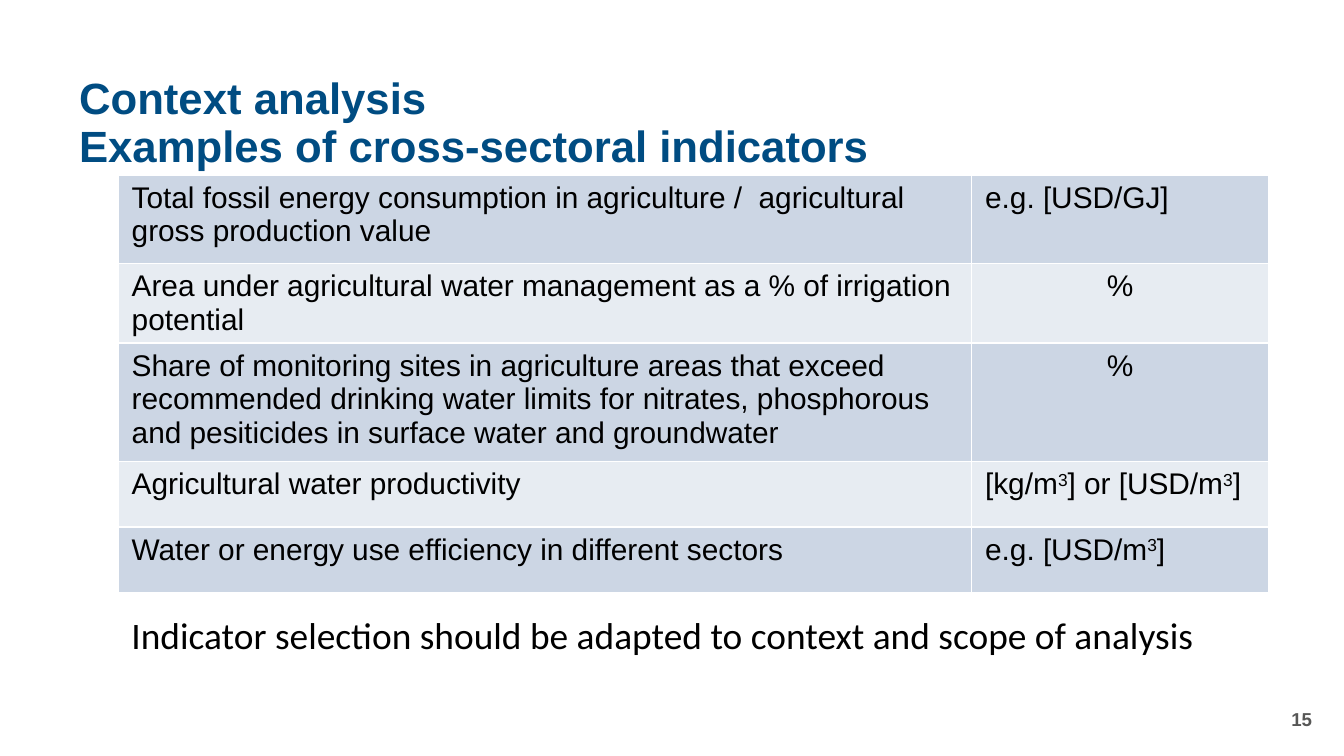
from dataclasses import dataclass

from lxml import etree
from pptx import Presentation
from pptx.dml.color import RGBColor
from pptx.enum.text import MSO_ANCHOR as Anchor, PP_ALIGN as Align
from pptx.oxml.ns import qn
from pptx.util import Inches, Pt

BLACK, WHITE, NAVY, GREY = "000000", "FFFFFF", "004C82", "575756"
BANDS = ("CCD6E4", "E7ECF2")


@dataclass
class Style:
    size: float
    color: str = BLACK
    font: str = "Arial"
    bold: bool = False


@dataclass
class Indicator:
    name: str
    unit: tuple[str, ...]  # every second part is superscript
    height: float
    align: Align = Align.LEFT


def rgb(color: str) -> RGBColor:
    return RGBColor.from_string(color)


def add_run(p, text: str, style: Style, superscript: bool = False) -> None:
    r = p.add_run()
    r.text = text
    r.font.name, r.font.size = style.font, Pt(style.size)
    r.font.bold, r.font.color.rgb = style.bold, rgb(style.color)
    if superscript:
        r._r.get_or_add_rPr().set("baseline", "30000")


def add_text(s, box: tuple[float, ...], lines: tuple[str, ...], style: Style,
             anchor: Anchor = Anchor.TOP, align: Align = Align.LEFT,
             spacing: float = 1.0) -> None:
    tf = s.shapes.add_textbox(*map(Inches, box)).text_frame
    tf.word_wrap, tf.vertical_anchor = True, anchor
    p = tf.paragraphs[0]
    p.alignment, p.line_spacing = align, spacing
    for i, line in enumerate(lines):
        if i:
            p.add_line_break()
        add_run(p, line, style)


def add_borders(cell, color: str, width: float) -> None:
    tc_pr = cell._tc.get_or_add_tcPr()
    for i, side in enumerate(("lnL", "lnR", "lnT", "lnB")):
        ln = etree.Element(qn(f"a:{side}"), w=str(Pt(width)))
        fill = etree.SubElement(ln, qn("a:solidFill"))
        etree.SubElement(fill, qn("a:srgbClr"), val=color)
        tc_pr.insert(i, ln)


def fill_cell(cell, parts: tuple[str, ...], style: Style, band: str,
              align: Align = Align.LEFT) -> None:
    cell.fill.solid()
    cell.fill.fore_color.rgb = rgb(band)
    cell.margin_bottom = Inches(0.01)
    add_borders(cell, WHITE, 1)
    p = cell.text_frame.paragraphs[0]
    p.alignment = align
    for i, part in enumerate(parts):
        add_run(p, part, style, superscript=i % 2 == 1)


def add_indicators(s, left: float, top: float, widths: tuple[float, ...],
                   rows: list[Indicator], style: Style) -> None:
    size = sum(widths), sum(row.height for row in rows)
    table = s.shapes.add_table(len(rows), len(widths),
                               *map(Inches, (left, top, *size))).table
    table.first_row = False
    for col, width in zip(table.columns, widths):
        col.width = Inches(width)
    for i, row in enumerate(rows):
        table.rows[i].height = Inches(row.height)
        band = BANDS[i % 2]
        fill_cell(table.cell(i, 0), (row.name,), style, band)
        fill_cell(table.cell(i, 1), row.unit, style, band, row.align)


INDICATORS = [
    Indicator("Total fossil energy consumption in agriculture /  agricultural "
              "gross production value", ("e.g. [USD/GJ]",), 0.66),
    Indicator("Area under agricultural water management as a % of irrigation "
              "potential", ("%",), 0.49, Align.CENTER),
    Indicator("Share of monitoring sites in agriculture areas that exceed "
              "recommended drinking water limits for nitrates, phosphorous "
              "and pesiticides in surface water and groundwater",
              ("%",), 0.88, Align.CENTER),
    Indicator("Agricultural water productivity",
              ("[kg/m", "3", "] or [USD/m", "3", "]"), 0.49),
    Indicator("Water or energy use efficiency in different sectors",
              ("e.g. [USD/m", "3", "]"), 0.49),
]


def main() -> None:
    prs = Presentation()
    prs.slide_width, prs.slide_height = Inches(10), Inches(10 * 9 / 16)
    s = prs.slides.add_slide(prs.slide_layouts[6])

    # Title
    add_text(s, (0.49, 0.63, 9.37, 0.59),
             ("Context analysis", "Examples of cross-sectoral indicators"),
             Style(23.4, NAVY, bold=True), Anchor.MIDDLE, spacing=0.9)

    # Slide number
    add_text(s, (7.61, 5.2, 2.25, 0.3), ("15",), Style(10, GREY, bold=True),
             Anchor.MIDDLE, Align.RIGHT)

    # Closing remark
    add_text(s, (0.88, 4.54, 9.37, 0.3),
             ("Indicator selection should be adapted to context and scope "
              "of analysis",), Style(20, font="Calibri"), spacing=0.9)

    # Indicator table
    add_indicators(s, 0.88, 1.3, (6.35, 2.21), INDICATORS, Style(16))

    prs.save("out.pptx")


if __name__ == "__main__":
    main()
